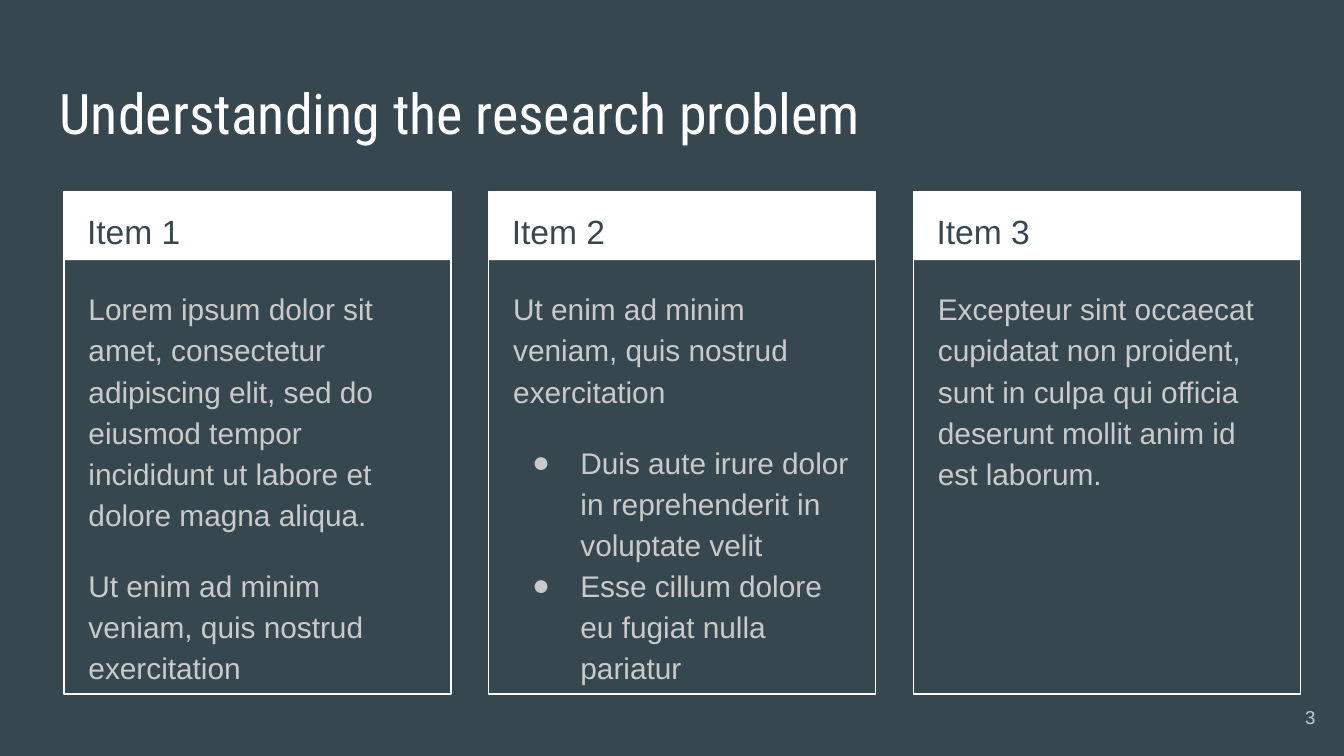
from dataclasses import dataclass

from lxml.etree import SubElement
from pptx import Presentation
from pptx.dml.color import RGBColor
from pptx.enum.shapes import MSO_SHAPE
from pptx.enum.text import MSO_ANCHOR, PP_ALIGN
from pptx.oxml.ns import qn
from pptx.util import Emu, Pt

PX = 4572  # 200 px to the inch
SLATE, WHITE, GREY = "37474F", "FFFFFF", "CACACA"
LEFT, TOP, PITCH = 95, 285, 632
CARD_W, CARD_H, HEADER_H = 576, 748, 102


@dataclass
class Para:
    text: str
    before: int = 0
    bullet: bool = False


@dataclass
class Card:
    title: str
    paras: list[Para]


@dataclass
class Style:
    size: int
    color: str
    font: str = "Arial"
    spacing: float = 1.0
    align: PP_ALIGN = PP_ALIGN.LEFT
    anchor: MSO_ANCHOR = MSO_ANCHOR.TOP


TITLE = Style(30, WHITE, "Roboto Condensed")
HEADER = Style(18, SLATE, spacing=1.15)
BODY = Style(16, GREY, spacing=1.15)
NUMBER = Style(10, GREY, align=PP_ALIGN.RIGHT, anchor=MSO_ANCHOR.MIDDLE)

CARDS = [
    Card("Item 1", [
        Para("Lorem ipsum dolor sit amet, consectetur adipiscing elit, sed do "
             "eiusmod tempor incididunt ut labore et dolore magna aliqua."),
        Para("Ut enim ad minim veniam, quis nostrud exercitation", before=16),
    ]),
    Card("Item 2", [
        Para("Ut enim ad minim veniam, quis nostrud exercitation"),
        Para("Duis aute irure dolor in reprehenderit in voluptate velit",
             before=16, bullet=True),
        Para("Esse cillum dolore eu fugiat nulla pariatur", bullet=True),
    ]),
    Card("Item 3", [
        Para("Excepteur sint occaecat cupidatat non proident, sunt in culpa "
             "qui officia deserunt mollit anim id est laborum."),
    ]),
]


def rgb(color: str) -> RGBColor:
    return RGBColor.from_string(color)


def px(*lengths: int) -> list[Emu]:
    return [Emu(n * PX) for n in lengths]


def add_bullet(p, style: Style) -> None:
    pPr = p._p.get_or_add_pPr()
    pPr.set("marL", str(100 * PX))
    pPr.set("indent", str(-72 * PX))
    buClr = SubElement(pPr, qn("a:buClr"))
    SubElement(buClr, qn("a:srgbClr"), val=style.color)
    SubElement(pPr, qn("a:buSzPts"), val=str(style.size * 100))
    SubElement(pPr, qn("a:buFont"), typeface=style.font)
    SubElement(pPr, qn("a:buChar"), char="●")


def add_text(s, x: int, y: int, w: int, h: int,
             paras: list[Para], style: Style) -> None:
    tf = s.shapes.add_textbox(*px(x, y, w, h)).text_frame
    inset = Emu(20 * PX)
    frame = {"word_wrap": True, "vertical_anchor": style.anchor,
             "margin_left": inset, "margin_right": inset,
             "margin_top": inset, "margin_bottom": inset}
    for name, value in frame.items():
        setattr(tf, name, value)
    for i, para in enumerate(paras):
        p = tf.add_paragraph() if i else tf.paragraphs[0]
        layout = {"alignment": style.align, "line_spacing": style.spacing,
                  "space_before": Pt(para.before), "space_after": Pt(0)}
        for name, value in layout.items():
            setattr(p, name, value)
        if para.bullet:
            add_bullet(p, style)
        r = p.add_run()
        r.text = para.text
        r.font.size, r.font.name = Pt(style.size), style.font
        r.font.color.rgb = rgb(style.color)


def add_rect(s, x: int, y: int, w: int, h: int, filled: bool) -> None:
    """Draw a solid white rectangle, or only its white outline."""
    sp = s.shapes.add_shape(MSO_SHAPE.RECTANGLE, *px(x, y, w, h))
    sp.shadow.inherit = False
    if filled:
        sp.fill.solid()
        sp.fill.fore_color.rgb = rgb(WHITE)
        sp.line.fill.background()
    else:
        sp.fill.background()
        sp.line.color.rgb = rgb(WHITE)
        sp.line.width = Pt(0.75)


def add_card(s, x: int, card: Card) -> None:
    add_rect(s, x, TOP, CARD_W, HEADER_H, filled=True)
    add_rect(s, x, TOP, CARD_W, CARD_H, filled=False)
    add_text(s, x + 15, TOP, 546, 100, [Para(card.title)], HEADER)
    add_text(s, x + 17, TOP + 120, 542, 612, card.paras, BODY)


def main() -> None:
    prs = Presentation()
    prs.slide_width, prs.slide_height = px(2000, 1125)
    s = prs.slides.add_slide(prs.slide_layouts[6])
    s.background.fill.solid()
    s.background.fill.fore_color.rgb = rgb(SLATE)

    add_text(s, 69, 97, 1864, 126,
             [Para("Understanding the research problem")], TITLE)
    for i, card in enumerate(CARDS):
        add_card(s, LEFT + i * PITCH, card)
    add_text(s, 1857, 1024, 120, 86, [Para("3")], NUMBER)
    prs.save("out.pptx")


if __name__ == "__main__":
    main()
